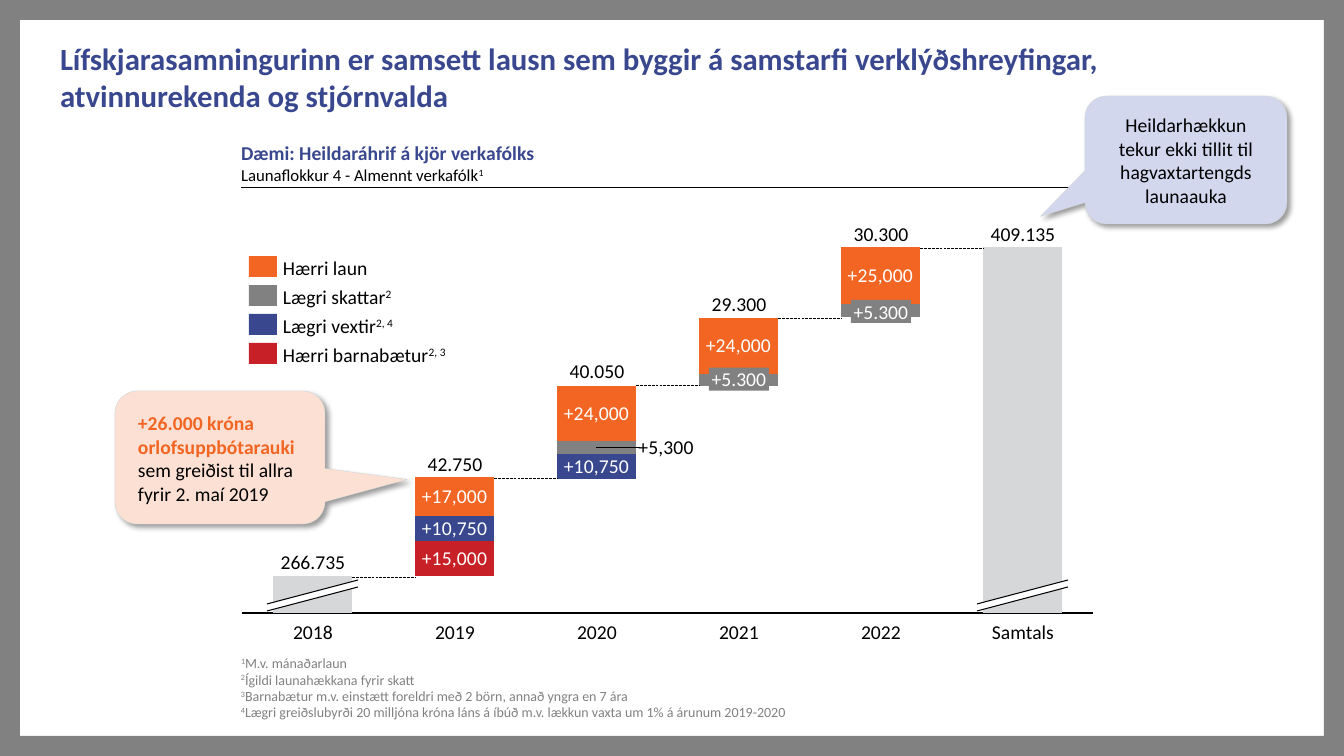
from pptx import Presentation
from pptx.chart.data import CategoryChartData
from pptx.dml.color import RGBColor
from pptx.enum.chart import XL_CHART_TYPE as CT, XL_TICK_LABEL_POSITION as TLP, XL_TICK_MARK as TM
from pptx.enum.dml import MSO_LINE
from pptx.enum.shapes import MSO_CONNECTOR, MSO_SHAPE as SHAPE
from pptx.enum.text import MSO_ANCHOR as ANCHOR, MSO_AUTO_SIZE, PP_ALIGN as ALIGN
from pptx.oxml import parse_xml
from pptx.oxml.ns import nsdecls, qn
from pptx.util import Emu, Pt

FONT = "Calibri"
W, H, MARGIN = 1344, 756, 20
COLORS = {
    "black": "000000", "white": "FFFFFF", "gray": "828181", "bar": "D6D7D9",
    "orange": "F26522", "blue": "39488E", "red": "C72127",
    "lilac": "D3D7ED", "peach": "FCE0D3", "edge": "D1D6D7",
}
YEARS = ["2018", "2019", "2020", "2021", "2022", "Samtals"]
TOTALS = ["266.735", "42.750", "40.050", "29.300", "30.300", "409.135"]
STUB = 15700
RAISES = [(), (15000, 10750, 17000), (10750, 5300, 24000), (5300, 24000), (5300, 25000), ()]
FILLS = [(), ("red", "blue", "orange"), ("blue", "gray", "orange"),
         ("gray", "orange"), ("gray", "orange"), ()]
TOPS = [STUB + sum(map(sum, RAISES[:i + 1])) for i in range(len(YEARS))]
BASES = [round(t - sum(v), -3) for t, v in zip(TOPS, RAISES)]
LEGEND = [("Hærri laun", "", "orange", 84), ("Lægri skattar", "2", "gray", 108),
          ("Lægri vextir", "2, 4", "blue", 111), ("Hærri barnabætur", "2, 3", "red", 163)]
NOTES = [("M.v. mánaðarlaun", 109), ("Ígildi launahækkana fyrir skatt", 175),
         ("Barnabætur m.v. einstætt foreldri með 2 börn, annað yngra en 7 ára", 394),
         ("Lægri greiðslubyrði 20 milljóna króna láns á íbúð m.v. lækkun vaxta um 1% "
          "á árunum 2019-2020", 559)]


def px(n):
    """Turn pixels into EMU."""
    return Emu(round(n * 914400 / 100.8))


def rgb(name):
    """Look up a named colour."""
    return RGBColor.from_string(COLORS[name])


def fill(part, name):
    """Give a shape or chart part a solid fill."""
    part.fill.solid()
    part.fill.fore_color.rgb = rgb(name)


def style(font, size=14, color="black", bold=False):
    """Format a font."""
    font.name, font.size, font.bold = FONT, Pt(size), bold
    font.color.rgb = rgb(color)


def write(sp, *paras, align=ALIGN.LEFT, anchor=ANCHOR.TOP, wrap=True, inset=0, **base):
    """Write paragraphs, each a list of (text, format) runs, into a shape."""
    tf = sp.text_frame
    tf.auto_size, tf.word_wrap, tf.vertical_anchor = MSO_AUTO_SIZE.NONE, wrap, anchor
    tf.margin_left = tf.margin_right = px(inset)
    tf.margin_top = tf.margin_bottom = 0
    for i, runs in enumerate(paras):
        p = tf.add_paragraph() if i else tf.paragraphs[0]
        p.alignment = align
        for text, own in runs:
            fmt = {**base, **own}
            raised = fmt.pop("raised", False)
            for j, line in enumerate(text.split("\n")):
                if j:
                    p.add_line_break()
                if line:
                    r = p.add_run()
                    r.text = line
                    style(r.font, **fmt)
                    if raised:
                        r.font._element.set("baseline", "30000")
    return sp


def text(s, box, *paras, **fmt):
    """Add a text box."""
    return write(s.shapes.add_textbox(*map(px, box)), *paras, **fmt)


def shape(s, kind, box, color):
    """Add a flat filled shape without a line."""
    sp = s.shapes.add_shape(kind, *map(px, box))
    sp.shadow.inherit = False
    fill(sp, color)
    sp.line.fill.background()
    return sp


def line(s, x1, y1, x2, y2, width=0.25, dash=None):
    """Add a straight black line."""
    c = s.shapes.add_connector(MSO_CONNECTOR.STRAIGHT, *map(px, (x1, y1, x2, y2)))
    c.line.color.rgb, c.line.width = rgb("black"), Pt(width)
    if dash:
        c.line.dash_style = dash
    c._element.spPr.append(parse_xml(f'<a:effectLst {nsdecls("a")}/>'))


def frame(s):
    """Draw the gray border of the slide."""
    for box in ((0, 0, W, MARGIN), (0, H - MARGIN, W, MARGIN),
                (0, 0, MARGIN, H), (W - MARGIN, 0, MARGIN, H)):
        shape(s, SHAPE.RECTANGLE, box, "gray")


def heading(s, x, y, w):
    """Place the chart heading and its rule."""
    text(s, (x, y, w, 44),
         [("Dæmi: Heildaráhrif á kjör verkafólks", dict(size=14, color="blue", bold=True))],
         [("Launaflokkur 4 - Almennt verkafólk", {}), ("1", dict(raised=True))], size=12)
    line(s, x, y + 46, x + w, y + 46)


def label_point(series, i, color, shift=0):
    """Show a signed value on one point, moved right by a share of the chart width."""
    style(series.points[i].data_label.font, 14, color)
    d = next(e for e in series._element.iter(qn("c:dLbl")) if e.find(qn("c:idx")).get("val") == str(i))
    d.find(qn("c:idx")).addnext(parse_xml(
        f'<c:numFmt {nsdecls("c")} formatCode="+#,##0" sourceLinked="0"/>'))
    if shift:
        d.find(qn("c:idx")).addnext(parse_xml(
            f'<c:layout {nsdecls("c")}><c:manualLayout><c:x val="{shift}"/><c:y val="0"/>'
            '</c:manualLayout></c:layout>'))


def stacked_chart(s, x, y, w, h):
    """Add the waterfall as stacked columns on a hidden base."""
    data = CategoryChartData()
    data.categories = ["1", "2", "3", "4", "5", "6"]
    data.add_series("Series 1", BASES)
    for k in range(3):
        data.add_series(f"Series {k + 2}", [v[k] if k < len(v) else None for v in RAISES])
    chart = s.shapes.add_chart(CT.COLUMN_STACKED, *map(px, (x, y, w, h)), data).chart
    chart.has_legend = chart.has_title = False
    style(chart.font, 10)
    cat, val, plot = chart.category_axis, chart.value_axis, chart.plots[0]
    cat.tick_label_position = TLP.NONE
    cat.major_tick_mark = cat.minor_tick_mark = TM.NONE
    cat.format.line.color.rgb, cat.format.line.width = rgb("black"), Pt(0.75)
    val.minimum_scale, val.maximum_scale = 0, BASES[-1]
    val.has_major_gridlines = val.visible = False
    plot.gap_width, plot.overlap, plot.vary_by_categories = 80, 100, False
    base, *stack = plot.series
    base.format.fill.background()
    for i in (0, len(YEARS) - 1):
        fill(base.points[i].format, "bar")
    for k, series in enumerate(stack):
        fill(series.format, "orange" if k else "gray")
        series.data_labels.show_value = False
        for i, names in enumerate(FILLS):
            if k < len(names):
                fill(series.points[i].format, names[k])
                if names[k] != "gray":
                    label_point(series, i, "white")
                elif k:
                    label_point(series, i, "black", 0.08)
    area = chart.element.find(f".//{qn('c:plotArea')}")
    for old in area.findall(qn("c:layout")):
        area.remove(old)
    area.insert(0, parse_xml(
        f'<c:layout {nsdecls("c")}><c:manualLayout><c:layoutTarget val="inner"/>'
        '<c:xMode val="edge"/><c:yMode val="edge"/><c:x val="0.01"/><c:y val="0.024"/>'
        '<c:w val="0.979"/><c:h val="0.953"/></c:manualLayout></c:layout>'))


def axis_break(s, x, y):
    """Cut a bar with a slanted white band between two lines."""
    w, rise, gap = 91, 24, 7
    points = [(x, y), (x + w, y - rise), (x + w, y - rise + gap), (x, y + gap)]
    fb = s.shapes.build_freeform(px(x), px(y))
    fb.add_line_segments([(px(a), px(b)) for a, b in points[1:]], close=True)
    sp = fb.convert_to_shape()
    sp.shadow.inherit = False
    fill(sp, "white")
    sp.line.fill.background()
    for dy in (0, gap):
        line(s, x, y + dy, x + w, y - rise + dy, 0.75)


def waterfall(s, x, y, w, h):
    """Place the chart with its connectors, breaks, totals and years."""
    stacked_chart(s, x, y, w, h)
    step, half, top, plot_h = 142, 39, y + 10, 365
    mids = [x + 80 + step * i for i in range(len(YEARS))]
    levels = [top + plot_h * (1 - t / TOPS[-1]) for t in TOPS]
    for mid, level in zip(mids[:-1], levels):
        line(s, mid + half, level, mid + step - half, level, dash=MSO_LINE.LONG_DASH)
    for mid in (mids[0], mids[-1]):
        axis_break(s, mid - 46, y + 366)
    line(s, mids[2] + 32, y + 209, mids[2] + 43, y + 209, 0.5)
    for mid, level, year, total in zip(mids, levels, YEARS, TOTALS):
        text(s, (mid - 35, level - 26, 70, 23), [(total, {})], align=ALIGN.CENTER,
             anchor=ANCHOR.BOTTOM, wrap=False, inset=3)
        text(s, (mid - 31, y + 382, 62, 23), [(year, {})], align=ALIGN.CENTER, wrap=False)
    for i in (3, 4):
        tag = shape(s, SHAPE.RECTANGLE, (mids[i] - 30, levels[i - 1] - 18, 60, 23), "gray")
        write(tag, [("+5.300", {})], align=ALIGN.CENTER, anchor=ANCHOR.MIDDLE, wrap=False,
              inset=3, color="white")


def legend(s, x, y):
    """Place the colour key."""
    for i, (name, note, color, w) in enumerate(LEGEND):
        top = y + 29 * i
        shape(s, SHAPE.RECTANGLE, (x, top, 28, 21), color)
        text(s, (x + 34, top, w, 23), [(name, {}), (note, dict(raised=True))],
             anchor=ANCHOR.MIDDLE, wrap=False)


def footnotes(s, x, y):
    """Place the numbered notes."""
    for i, (note, w) in enumerate(NOTES):
        text(s, (x, y + 16.2 * i, w, 17), [(str(i + 1), dict(raised=True)), (note, {})],
             wrap=False, size=10, color="gray")


def callout(s, box, color, tail, inner, runs, align):
    """Place a shadowed speech bubble and its text."""
    sp = shape(s, SHAPE.ROUNDED_RECTANGULAR_CALLOUT, box, color)
    sp.adjustments[0], sp.adjustments[1], sp.adjustments[2] = *tail, 0.167
    sp.line.color.rgb, sp.line.width = rgb("edge"), Pt(0.25)
    sp._element.spPr.find(qn("a:effectLst")).append(parse_xml(
        f'<a:outerShdw {nsdecls("a")} blurRad="{Pt(4)}" dist="{Pt(3)}" dir="2700000" '
        'algn="tl" rotWithShape="0"><a:srgbClr val="000000"><a:alpha val="40000"/>'
        '</a:srgbClr></a:outerShdw>'))
    dx, dy, w, h = inner
    text(s, (box[0] + dx, box[1] + dy, w, h), runs, align=align)


def main():
    """Build and save the slide."""
    prs = Presentation()
    prs.slide_width, prs.slide_height = px(W), px(H)
    s = prs.slides.add_slide(prs.slide_layouts[5])
    title = s.shapes.title
    title.left, title.top, title.width, title.height = map(px, (60, 40, 1230, 48))
    write(title, [("Lífskjarasamningurinn er samsett lausn sem byggir á samstarfi "
                   "verklýðshreyfingar, atvinnurekenda og stjórnvalda", {})],
          size=22, color="blue", bold=True)
    frame(s)
    heading(s, 241, 141, 854)
    waterfall(s, 233, 238, 870, 384)
    legend(s, 249, 256)
    footnotes(s, 241, 655)
    callout(s, (1085, 96, 202, 128), "lilac", (-0.721, 0.441), (22, 17, 158, 95),
            [("Heildarhækkun tekur ekki tillit til hagvaxtartengds launaauka", {})], ALIGN.CENTER)
    callout(s, (115, 391, 210, 133), "peach", (0.892, 0.165), (23, 20, 164, 95),
            [("+26.000 króna\norlofsuppbótarauki\n", dict(color="orange", bold=True)),
             ("sem greiðist til allra\nfyrir 2. maí 2019", {})], ALIGN.LEFT)
    prs.save("out.pptx")


if __name__ == "__main__":
    main()
